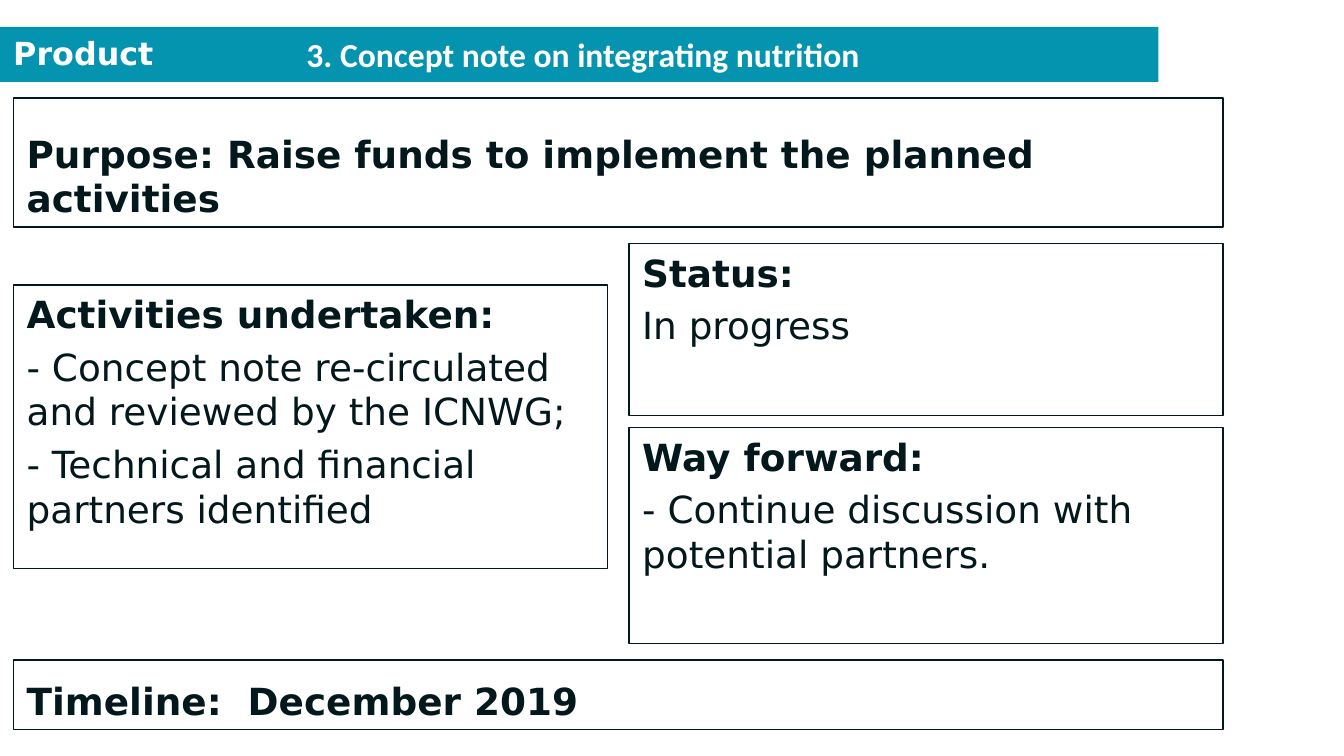
from pptx import Presentation
from pptx import util as u
from pptx.dml.color import RGBColor
from pptx.enum import shapes, text

TEAL = RGBColor(0x05, 0x94, 0xAF)
INK = RGBColor(0x03, 0x18, 0x1C)
WHITE = RGBColor(0xFF, 0xFF, 0xFF)
BODY = "DejaVu Sans"

TITLE = "3. Concept note on integrating nutrition"
LABEL = "Product"

# first column, columns spanned, top, height, anchor, heading, lines
TOP, BASE = text.MSO_ANCHOR.TOP, text.MSO_ANCHOR.BOTTOM
PANELS = [
    (0, 2, 0.73, 0.96, BASE,
     "Purpose: Raise funds to implement the planned activities", []),
    (0, 1, 2.12, 2.11, TOP, "Activities undertaken:",
     ["- Concept note re-circulated and reviewed by the ICNWG;",
      "- Technical and financial partners identified"]),
    (1, 1, 1.81, 1.28, TOP, "Status:", ["In progress"]),
    (1, 1, 3.18, 1.61, TOP, "Way forward:",
     ["- Continue discussion with potential partners."]),
    (0, 2, 4.91, 0.52, BASE, "Timeline:  December 2019", []),
]
WIDE = u.Inches(10)
LEFT, COL, GAP = 0.1, 4.42, 0.16


def style(para, size, color, bold=True, font=BODY, align=text.PP_ALIGN.LEFT):
    para.alignment = align
    for run in para.runs:
        run.font.name = font
        run.font.size = u.Pt(size)
        run.font.bold = bold
        run.font.color.rgb = color


def place(shape, *box):
    shape.left, shape.top, shape.width, shape.height = map(u.Inches, box)


def header(slide):
    bar = slide.shapes.title
    place(bar, 0, 0.2, 8.62, 0.41)
    bar.fill.solid()
    bar.fill.fore_color.rgb = TEAL
    frame = bar.text_frame
    frame.text = TITLE
    frame.margin_left = u.Inches(0.16)
    frame.auto_size = text.MSO_AUTO_SIZE.NONE
    frame.vertical_anchor = text.MSO_ANCHOR.MIDDLE
    style(frame.paragraphs[0], 18, WHITE, font="Calibri",
          align=text.PP_ALIGN.CENTER)

    label = slide.shapes.add_textbox(0, 0, 0, 0)
    place(label, 0, 0.2, 9.32, 0.38)
    label.text_frame.word_wrap = True
    label.text_frame.text = LABEL
    style(label.text_frame.paragraphs[0], 17, WHITE)


def panel(slide, col, span, top, height, anchor, head, lines):
    box = slide.shapes.add_shape(shapes.MSO_SHAPE.RECTANGLE, 0, 0, 0, 0)
    place(box, LEFT + col * (COL + GAP), top,
          span * COL + (span - 1) * GAP, height)
    box.shadow.inherit = False
    box.fill.background()
    box.line.color.rgb = INK
    box.line.width = u.Pt(0.75)
    frame = box.text_frame
    frame.word_wrap = True
    frame.vertical_anchor = anchor
    frame.text = "\n".join([head] + lines)
    for i, para in enumerate(frame.paragraphs):
        para.space_before = u.Pt(4)
        style(para, 20, INK, bold=i == 0)


def main():
    deck = Presentation()
    deck.slide_width, deck.slide_height = WIDE, WIDE * 9 // 16
    slide = deck.slides.add_slide(deck.slide_layouts[5])
    header(slide)
    for item in PANELS:
        panel(slide, *item)
    deck.save("out.pptx")


if __name__ == "__main__":
    main()
